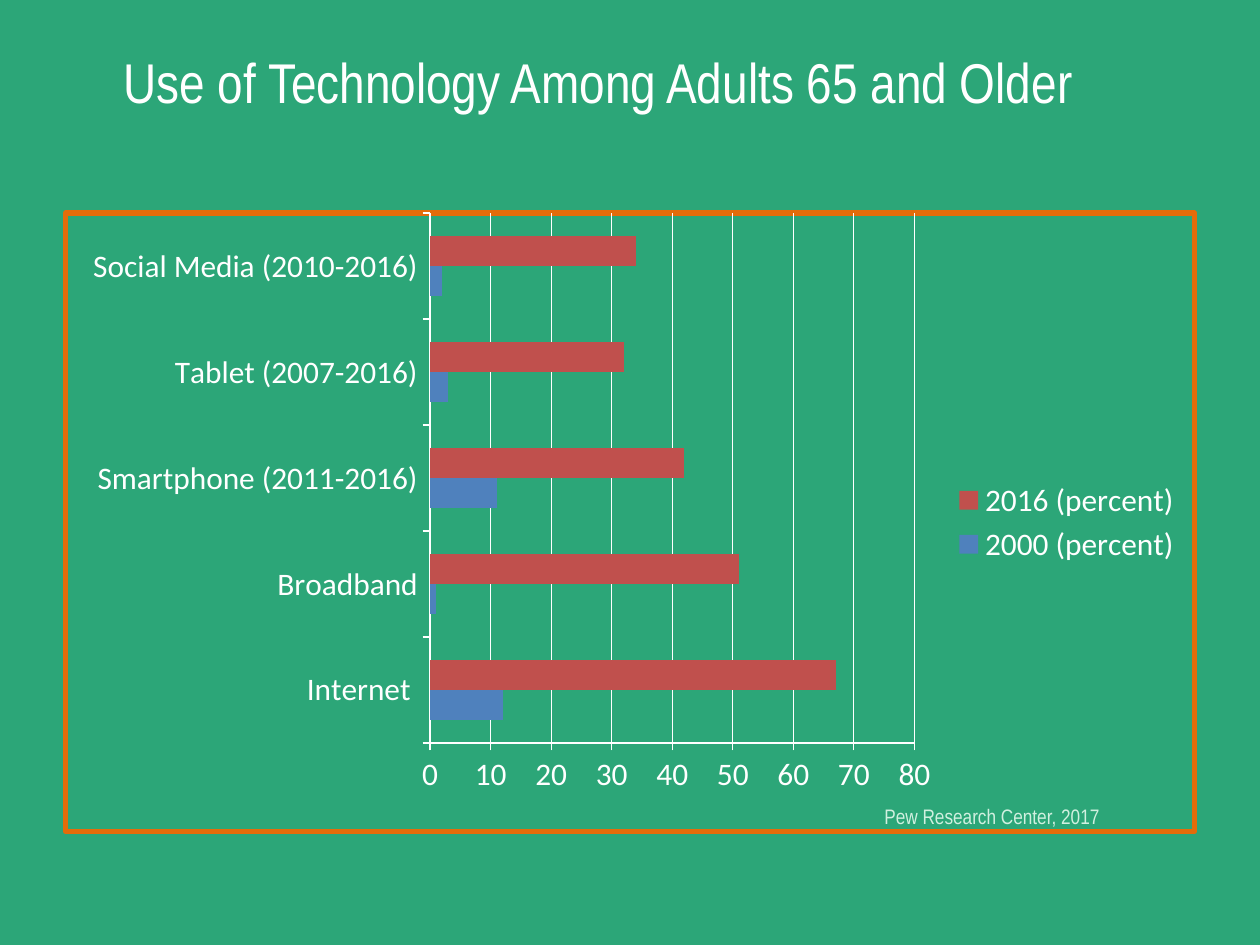
"""Build a slide with a bar chart of technology use among adults 65 and older."""
from lxml import etree
from pptx import Presentation, util as u
from pptx.chart.data import CategoryChartData
from pptx.dml.color import RGBColor
from pptx.enum import chart as ec, text
from pptx.oxml import parse_xml
from pptx.oxml.ns import nsdecls, qn

COLORS = {"bg": "2CA678", "text": "FFFFFF", "source": "D1F0E0", "border": "E46C0A",
          "2000": "4F81BD", "2016": "C0504D"}
PLOT = {"x": 0.323, "y": 0, "w": 0.429, "h": 0.857}


def set_font(font, name, size, color):
    font.name, font.size = name, u.Pt(size)
    font.color.rgb = RGBColor.from_string(COLORS[color])


prs = Presentation()
prs.slide_width, prs.slide_height = u.Inches(10), u.Inches(7.5)
s = prs.slides.add_slide(prs.slide_layouts[5])
s.background.fill.solid()
s.background.fill.fore_color.rgb = RGBColor.from_string(COLORS["bg"])

title = s.shapes.title
title.left, title.top = u.Inches(0), u.Inches(0.17)
title.width, title.height = u.Inches(9.5), u.Inches(0.95)
tf = title.text_frame
tf.text = "Use of Technology Among Adults 65 and Older"
tf.vertical_anchor = text.MSO_ANCHOR.MIDDLE
p = tf.paragraphs[0]
p.alignment = text.PP_ALIGN.CENTER
set_font(p.font, "Arial Narrow", 32, "text")

data = CategoryChartData()
data.categories = ["Internet ", "Broadband", "Smartphone (2011-2016)",
                   "Tablet (2007-2016)", "Social Media (2010-2016)"]
data.add_series("2000 (percent)", [12, 1, 11, 3, 2])
data.add_series("2016 (percent)", [67, 51, 42, 32, 34])
chart = s.shapes.add_chart(ec.XL_CHART_TYPE.BAR_CLUSTERED, u.Inches(0.5), u.Inches(1.67),
                           u.Inches(9), u.Inches(4.95), data).chart
set_font(chart.font, "Calibri", 18, "text")
chart.has_title = False
chart.has_legend = True
chart.legend.position = ec.XL_LEGEND_POSITION.RIGHT
chart.legend.include_in_layout = False

plot = chart.plots[0]
plot.gap_width, plot.overlap, plot.vary_by_categories = 150, 0, False
for series, year in zip(plot.series, ("2000", "2016")):
    series.format.fill.solid()
    series.format.fill.fore_color.rgb = RGBColor.from_string(COLORS[year])

cat, val = chart.category_axis, chart.value_axis
val.minimum_scale, val.maximum_scale, val.major_unit = 0, 80, 10
val.has_major_gridlines = True
for axis in (cat, val):
    axis.major_tick_mark = ec.XL_TICK_MARK.OUTSIDE
    axis.minor_tick_mark = ec.XL_TICK_MARK.NONE
for line in (cat.format.line, val.format.line, val.major_gridlines.format.line):
    line.width = u.Pt(0.75)
    line.color.rgb = RGBColor.from_string(COLORS["text"])

area = chart.element.find(".//" + qn("c:plotArea"))
for old in area.findall(qn("c:layout")):
    area.remove(old)
layout = parse_xml(f'<c:layout {nsdecls("c")}><c:manualLayout/></c:layout>')
settings = {"layoutTarget": "inner", "xMode": "edge", "yMode": "edge", **PLOT}
for tag, value in settings.items():
    etree.SubElement(layout[0], qn(f"c:{tag}")).set("val", str(value))
area.insert(0, layout)

chart.element.find(qn("c:chart")).addnext(parse_xml(
    f'<c:spPr {nsdecls("c", "a")}><a:noFill/><a:ln w="{u.Pt(3)}"><a:solidFill>'
    f'<a:srgbClr val="{COLORS["border"]}"/></a:solidFill></a:ln></c:spPr>'))

source = s.shapes.add_textbox(u.Inches(6.92), u.Inches(6.33), u.Inches(2.58), u.Inches(0.3))
tf = source.text_frame
tf.word_wrap = True
tf.auto_size = text.MSO_AUTO_SIZE.SHAPE_TO_FIT_TEXT
p = tf.paragraphs[0]
p.text = "Pew Research Center, 2017"
set_font(p.font, "Arial Narrow", 12, "source")

prs.save("out.pptx")
